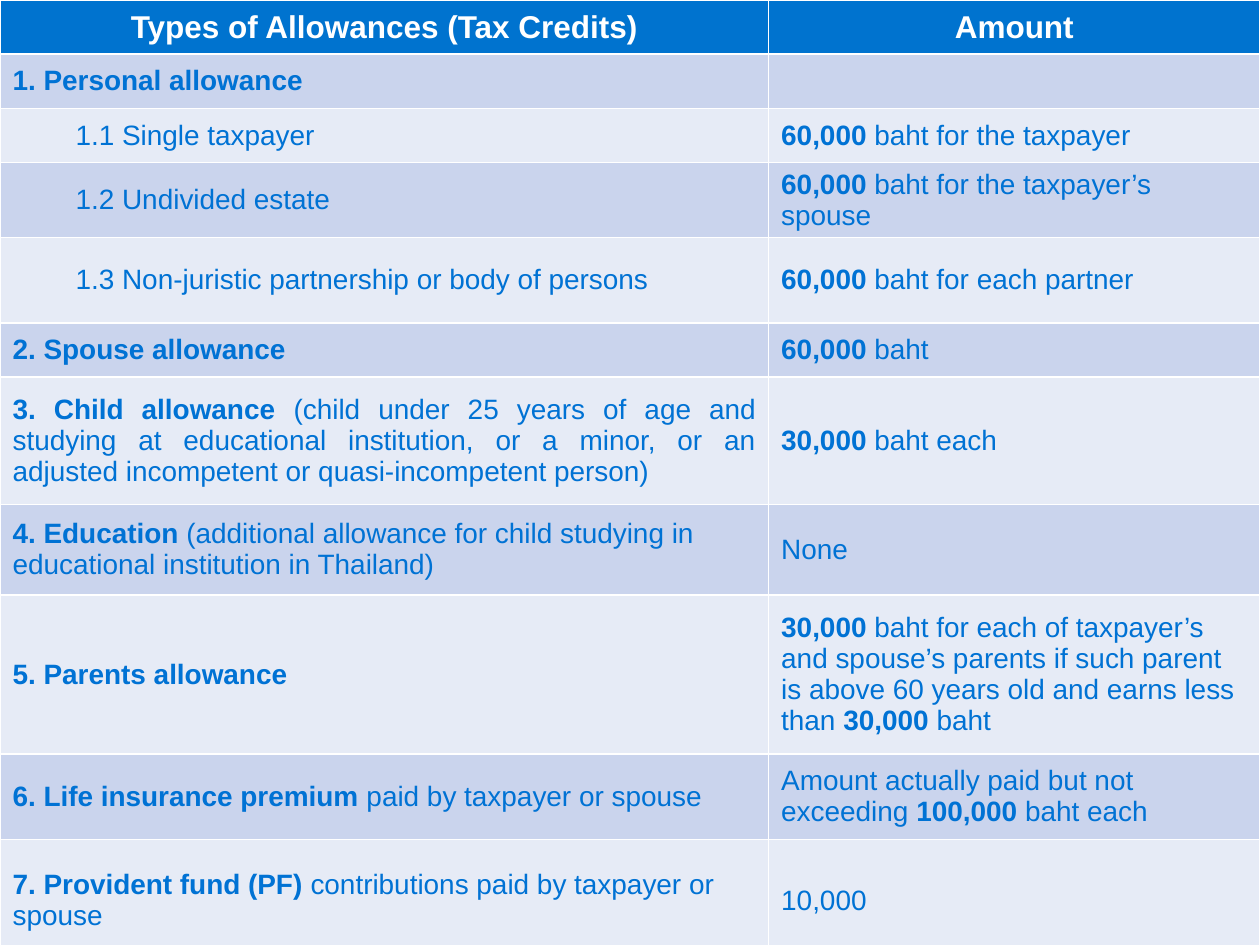
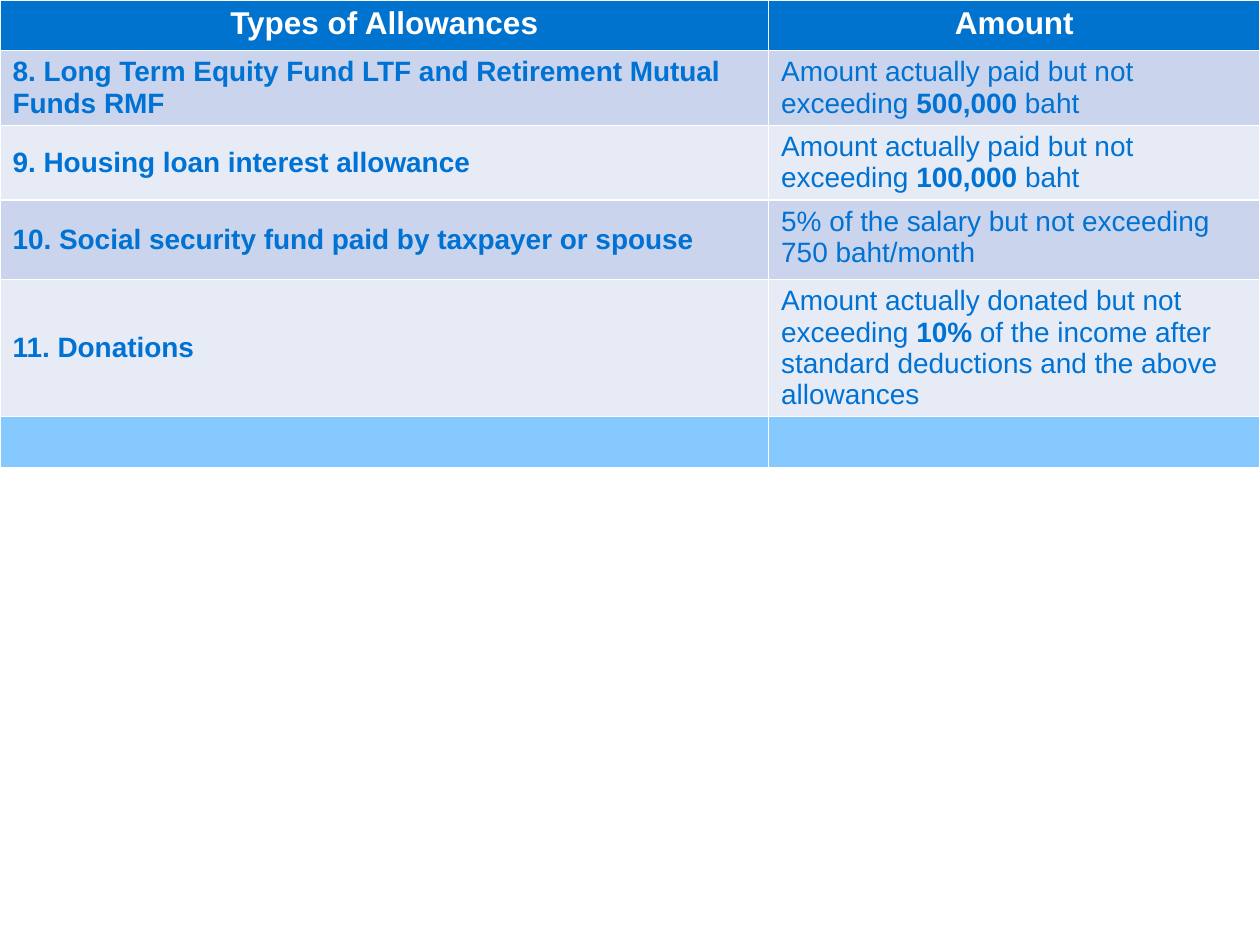
from pptx import Presentation
from pptx.dml.color import RGBColor
from pptx.enum.text import MSO_ANCHOR, PP_ALIGN
from pptx.util import Inches, Pt

# Content: each row is (allowance, amount, height); ** switches bold on and off
ALLOWANCES_1 = [
    ("**Types of Allowances (Tax Credits)**", "**Amount**", 0.43),
    ("**1. Personal allowance**", "", 0.43),
    ("1.1 Single taxpayer", "**60,000** baht for the taxpayer", 0.43),
    ("1.2 Undivided estate", "**60,000** baht for the taxpayer’s spouse", 0.43),
    ("1.3 Non-juristic partnership or body of persons",
     "**60,000 **baht for each partner", 0.68),
    ("**2. Spouse allowance**", "**60,000** baht", 0.43),
    ("**3. Child allowance **(child under 25 years of age and studying at "
     "educational institution, or a minor, or an adjusted incompetent or "
     "quasi-incompetent person)", "**30,000** baht each", 1.01),
    ("**4. Education** (additional allowance for child studying in "
     "educational institution in Thailand)", "None", 0.72),
    ("**5. Parents allowance**",
     "**30,000** baht for each of taxpayer’s and spouse’s parents if such "
     "parent is above 60 years old and earns less than **30,000 **baht", 1.26),
    ("**6. Life insurance premium **paid by taxpayer or spouse",
     "Amount actually paid but not exceeding **100,000 **baht each", 0.68),
    ("**7. Provident fund (PF) **contributions paid by taxpayer or spouse",
     "10,000", 0.97),
]
ALLOWANCES_2 = [
    ("**Types of Allowances**", "**Amount**", 0.4),
    ("**8. Long Term Equity Fund LTF and Retirement Mutual Funds RMF**",
     "Amount actually paid but not exceeding **500,000** baht", 0.4),
    ("**9. Housing loan interest allowance**",
     "Amount actually paid but not exceeding **100,000 **baht", 0.4),
    ("**10. Social security fund paid by taxpayer or spouse**",
     "5% of the salary but not exceeding 750 baht/month", 0.63),
    ("**11. Donations**",
     "Amount actually donated but not exceeding **10%** of the income after "
     "standard deductions and the above allowances", 0.4),
    ("", "", 0.4),
]
SUB_ITEMS = ("1.1", "1.2", "1.3")
JUSTIFIED = "**3."

# Shared style
FONT = "Arial"
COL_WIDTHS = (6.1, 3.9)
HEADER_FILL, HEADER_TEXT, BODY_TEXT = "0073CF", "FFFFFF", "0072D4"
BANDS = ("E6EBF6", "CAD4ED")
EMPTY_ROW_FILL = "85C9FF"


def rgb(color):
    return RGBColor.from_string(color)


def fill_cell(cell, text, fill, color, size, anchor):
    cell.fill.solid()
    cell.fill.fore_color.rgb = rgb(fill)
    cell.vertical_anchor = anchor
    p = cell.text_frame.paragraphs[0]
    for i, part in enumerate(text.split("**")):
        if part:
            r = p.add_run()
            r.text = part
            r.font.name = FONT
            r.font.size = Pt(size)
            r.font.bold = i % 2 == 1
            r.font.color.rgb = rgb(color)
    return p


def add_allowance_slide(prs, rows, header_anchor, amount_anchor):
    slide = prs.slides.add_slide(prs.slide_layouts[6])
    frame = slide.shapes.add_table(
        len(rows), len(COL_WIDTHS), 0, 0, Inches(sum(COL_WIDTHS)),
        Inches(sum(height for *_, height in rows)))
    table = frame.table
    for col, width in zip(table.columns, COL_WIDTHS):
        col.width = Inches(width)

    for i, (*texts, height) in enumerate(rows):
        table.rows[i].height = Inches(height)
        for j, text in enumerate(texts):
            cell = table.cell(i, j)
            # Header row
            if i == 0:
                p = fill_cell(cell, text, HEADER_FILL, HEADER_TEXT, 18, header_anchor)
                p.alignment = PP_ALIGN.CENTER
                continue
            # Banded body rows
            fill = BANDS[i % 2] if any(texts) else EMPTY_ROW_FILL
            anchor = amount_anchor if j else MSO_ANCHOR.MIDDLE
            p = fill_cell(cell, text, fill, BODY_TEXT, 16, anchor)
            if text.startswith(SUB_ITEMS):
                p.level = 1
                p._p.get_or_add_pPr().set("marL", str(Inches(0.5)))
            elif text.startswith(JUSTIFIED):
                p.alignment = PP_ALIGN.JUSTIFY


def main():
    prs = Presentation()
    prs.slide_width, prs.slide_height = Inches(10), Inches(7.5)
    add_allowance_slide(prs, ALLOWANCES_1, MSO_ANCHOR.MIDDLE, MSO_ANCHOR.MIDDLE)
    add_allowance_slide(prs, ALLOWANCES_2, MSO_ANCHOR.TOP, MSO_ANCHOR.TOP)
    prs.save("out.pptx")


if __name__ == "__main__":
    main()
